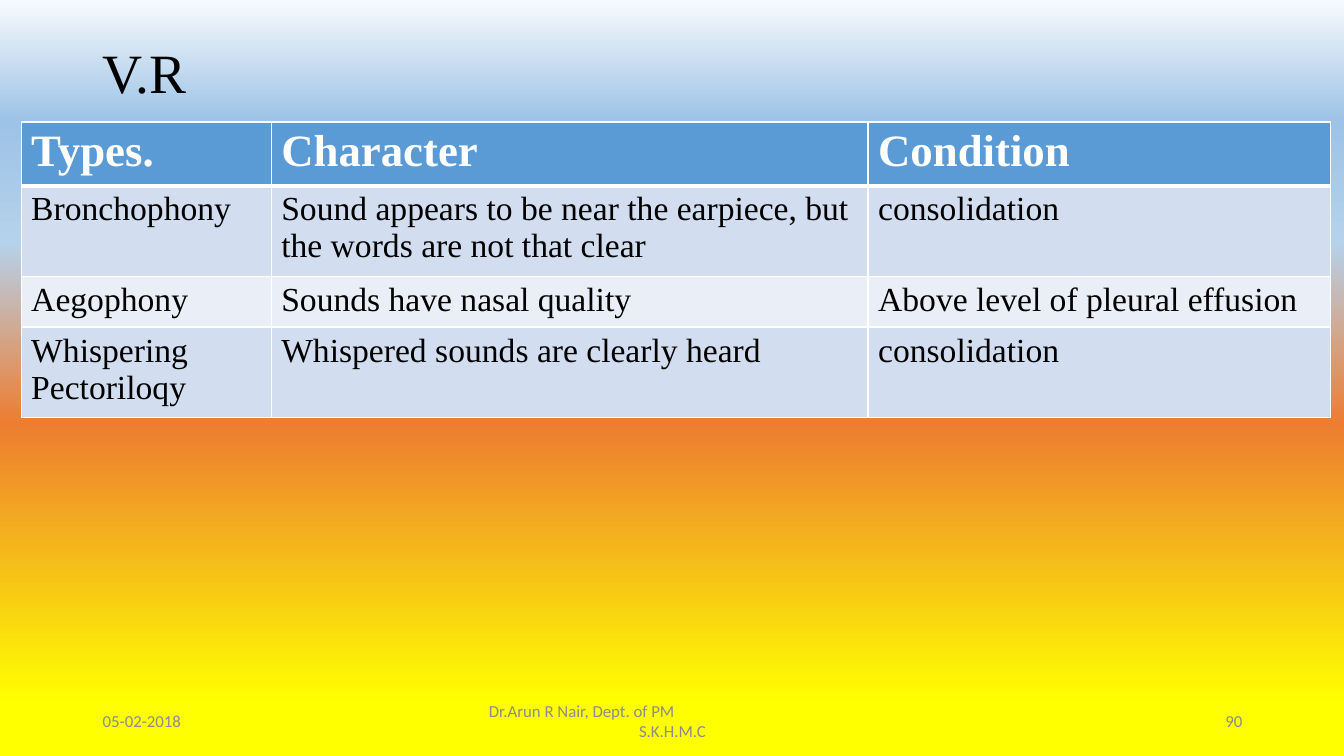
from lxml import etree
from pptx import Presentation
from pptx.dml.color import RGBColor
from pptx.enum.text import MSO_ANCHOR as Anchor, PP_ALIGN as Align
from pptx.oxml.ns import qn
from pptx.util import Inches, Pt

COLORS = {
    "black": "000000", "white": "FFFFFF", "gray": "8C8C8C",
    "header": "5B9BD5", "odd": "D2DEEF", "even": "EAEFF7",
}
SKY_TO_YELLOW = [(0, "F7FAFD"), (16, "9DC3E6"), (32, "B5D2EC"), (56, "ED7D31"), (93, "FFFF00")]
SERIF = "Times New Roman"


def write(para, text, size=12, font="Calibri", color="gray", bold=False, align=Align.LEFT):
    para.alignment = align
    span = para.add_run()
    span.text = text
    span.font.size = Pt(size)
    span.font.name = font
    span.font.bold = bold
    span.font.color.rgb = RGBColor.from_string(COLORS[color])


def add_frame(left, top, width, height):
    """Add a wrapping, vertically centred text box and return its text frame."""
    box = page.shapes.add_textbox(Inches(left), Inches(top), Inches(width), Inches(height))
    frame = box.text_frame
    frame.word_wrap = True
    frame.vertical_anchor = Anchor.MIDDLE
    return frame


deck = Presentation()
deck.slide_width, deck.slide_height = Inches(13.33), Inches(7.5)
page = deck.slides.add_slide(deck.slide_layouts[6])

# Background gradient, running downwards
backdrop = page.background.fill
backdrop.gradient()
backdrop.gradient_angle = 270
stops = page.element.find(".//" + qn("a:gsLst"))
for stop in list(stops):
    stops.remove(stop)
for percent, color in SKY_TO_YELLOW:
    stop = etree.SubElement(stops, qn("a:gs"), pos=str(percent * 1000))
    etree.SubElement(stop, qn("a:srgbClr"), val=color)

# Title
title = add_frame(0.92, 0.4, 11.5, 0.7).paragraphs[0]
title.line_spacing = 0.9
write(title, "V.R", size=39.6, font=SERIF, color="black")

# Table of vocal resonance types
rows = [
    ("Types.", "Character", "Condition"),
    ("Bronchophony", "Sound appears to be near the earpiece, but the words are not that clear",
     "consolidation"),
    ("Aegophony", "Sounds have nasal quality", "Above level of pleural effusion"),
    ("Whispering Pectoriloqy", "Whispered sounds are clearly heard", "consolidation"),
]
widths = [2.48, 5.92, 4.59]
heights = [0.58, 0.84, 0.47, 0.84]
table = page.shapes.add_table(len(rows), len(widths), Inches(0.21), Inches(1.21),
                              Inches(sum(widths)), Inches(sum(heights))).table
for column, width in zip(table.columns, widths):
    column.width = Inches(width)
for r, (texts, height) in enumerate(zip(rows, heights)):
    table.rows[r].height = Inches(height)
    header = r == 0
    for c, text in enumerate(texts):
        cell = table.cell(r, c)
        properties = cell._tc.get_or_add_tcPr()
        for side in "LRTB":
            thick = (r, side) in [(0, "B"), (1, "T")]
            line = etree.SubElement(properties, qn(f"a:ln{side}"), w=str(Pt(3 if thick else 1)))
            paint = etree.SubElement(line, qn("a:solidFill"))
            etree.SubElement(paint, qn("a:srgbClr"), val=COLORS["white"])
        cell.fill.solid()
        shade = "header" if header else "odd" if r % 2 else "even"
        cell.fill.fore_color.rgb = RGBColor.from_string(COLORS[shade])
        write(cell.text_frame.paragraphs[0], text, size=32 if header else 24, font=SERIF,
              color="white" if header else "black", bold=header)

# Footer: date, author, page number
write(add_frame(0.92, 6.95, 3, 0.4).paragraphs[0], "05-02-2018")
author = add_frame(4.42, 6.95, 4.5, 0.4)
name = author.paragraphs[0]
name._p.get_or_add_pPr().set("marL", str(Inches(0.33)))
write(name, "Dr.Arun R Nair, Dept. of PM")
write(author.add_paragraph(), "S.K.H.M.C", align=Align.CENTER)
write(add_frame(9.42, 6.95, 3, 0.4).paragraphs[0], "90", align=Align.RIGHT)

deck.save("out.pptx")
